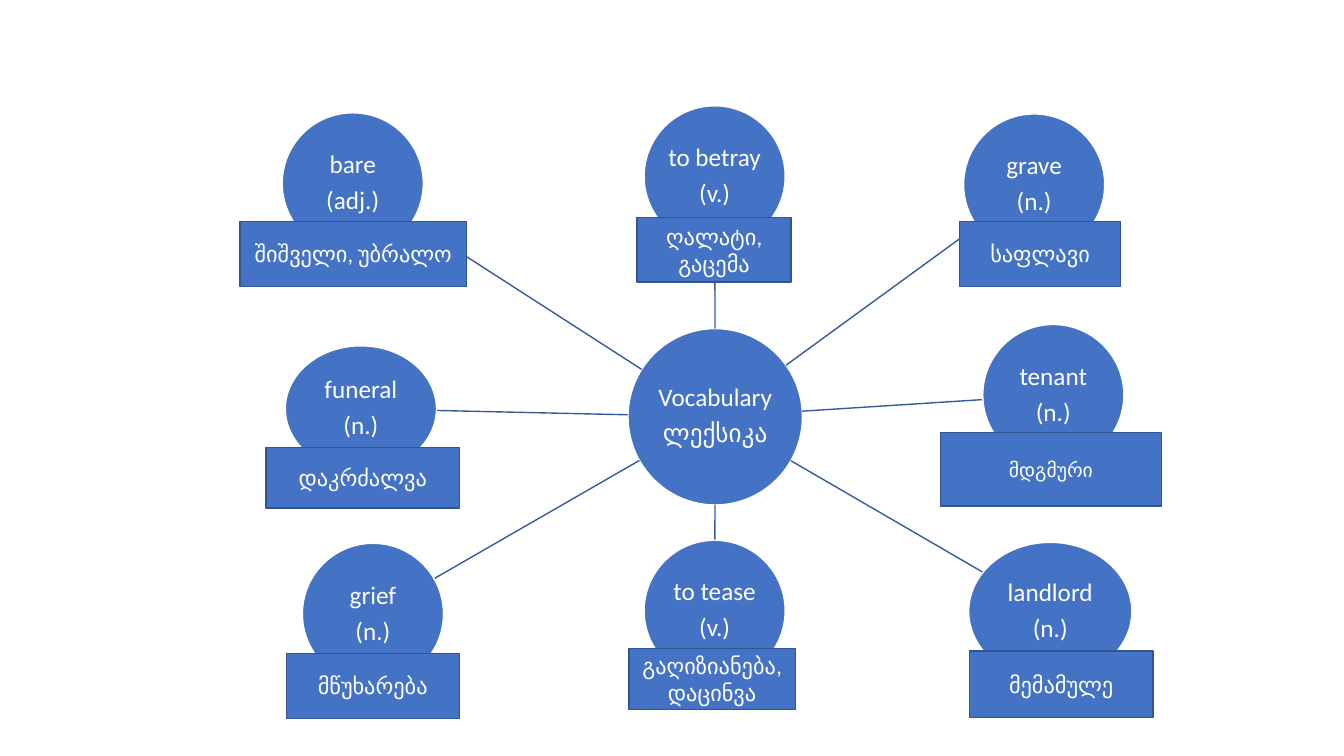
from dataclasses import dataclass
from math import hypot

from lxml import etree
from pptx import Presentation
from pptx.dml.color import RGBColor
from pptx.enum.shapes import MSO_CONNECTOR, MSO_SHAPE
from pptx.enum.text import MSO_ANCHOR, PP_ALIGN
from pptx.oxml.ns import qn
from pptx.util import Pt

OVAL, RECT = MSO_SHAPE.OVAL, MSO_SHAPE.RECTANGLE
STRAIGHT = MSO_CONNECTOR.STRAIGHT
MIDDLE, CENTER = MSO_ANCHOR.MIDDLE, PP_ALIGN.CENTER


@dataclass(frozen=True)
class Theme:
    fill: RGBColor = RGBColor(0x44, 0x72, 0xC4)
    white: RGBColor = RGBColor(0xFF, 0xFF, 0xFF)
    spoke: RGBColor = RGBColor(0x36, 0x5B, 0x9D)
    edge: RGBColor = RGBColor(0x32, 0x54, 0x91)
    font: str = "Calibri"
    word: int = 18
    gloss: int = 16
    small: int = 14


THEME = Theme()
SLIDE = (960, 540)
HUB = (448.6, 234.7, 124.6, 126)

# word, part of speech, circle box, Georgian meaning, label box, label size
WORDS = [
    ("to betray", "(v.)", (460.1, 75.6, 100.8, 100.8),
     "ღალატი, გაცემა", (455, 155.5, 110.2, 46.1), THEME.gloss),
    ("grave", "(n.)", (688.3, 81.4, 100.8, 100.8),
     "საფლავი", (685.4, 158.4, 115.2, 46.1), THEME.gloss),
    ("tenant", "(n.)", (702, 231.8, 100.8, 100.8),
     "მდგმური", (671.8, 308.9, 157.7, 52.6), THEME.small),
    ("landlord", "(n.)", (691.9, 387.4, 116.6, 98.6),
     "მემამულე", (692.6, 465.1, 131, 47.5), THEME.gloss),
    ("to tease", "(v.)", (460.1, 385.9, 100.8, 100.8),
     "გაღიზიანება, დაცინვა", (449.3, 463, 118.8, 43.9), THEME.gloss),
    ("grief", "(n.)", (216, 388.1, 100.8, 100.8),
     "მწუხარება", (204.5, 466.6, 123.8, 46.8), THEME.gloss),
    ("funeral", "(n.)", (203.8, 247, 108, 90),
     "დაკრძალვა", (190.1, 319.7, 138.2, 43.2), THEME.gloss),
    ("bare", "(adj.)", (201.6, 80.6, 100.8, 100.8),
     "შიშველი, უბრალო", (171.4, 158.4, 162, 46.1), THEME.gloss),
]


def put(item, **values):
    for name, value in values.items():
        setattr(item, name, value)


def add_block(slide, kind, box, edge, lines, size):
    """Draw a filled shape with centred lines of text and return it."""
    block = slide.shapes.add_shape(kind, *map(Pt, box))
    block.shadow.inherit = False
    block.fill.solid()
    block.fill.fore_color.rgb = THEME.fill
    block.line.color.rgb = edge
    block.line.width = Pt(1)
    frame = block.text_frame
    put(frame, word_wrap=True, vertical_anchor=MIDDLE)
    for i, text in enumerate(lines):
        para = frame.add_paragraph() if i else frame.paragraphs[0]
        para.text = text
        para.alignment = CENTER
        put(para.font, name=THEME.font, size=Pt(size))
        para.font.color.rgb = THEME.white
    return block


def add_circle(slide, box, lines):
    circle = add_block(slide, OVAL, box, THEME.white, lines, THEME.word)
    frame = circle.text_frame
    inset = Pt(0.9)
    put(frame, margin_left=inset, margin_right=inset,
        margin_top=inset, margin_bottom=inset)
    for para in frame.paragraphs:
        put(para, line_spacing=0.9, space_after=Pt(0.35 * THEME.word))


def center(box):
    left, top, width, height = box
    return left + width / 2, top + height / 2


def rim(box, goal):
    """Return the point where the ray to the goal leaves the ellipse."""
    x, y = center(box)
    dx, dy = goal[0] - x, goal[1] - y
    scale = 1 / hypot(dx / (box[2] / 2), dy / (box[3] / 2))
    return x + dx * scale, y + dy * scale


def add_spoke(slide, hub, box):
    ends = rim(hub, center(box)) + rim(box, center(hub))
    spoke = slide.shapes.add_connector(STRAIGHT, *map(Pt, ends))
    spoke.line.color.rgb = THEME.spoke
    spoke.line.width = Pt(1)
    etree.SubElement(spoke._element.spPr, qn("a:effectLst"))


def add_wheel(slide, hub, words):
    add_circle(slide, hub, ["Vocabulary", "ლექსიკა"])
    for word, part, box, *_ in words:
        add_spoke(slide, hub, box)
        add_circle(slide, box, [word, part])


def add_labels(slide, words):
    for *_, gloss, box, size in words:
        add_block(slide, RECT, box, THEME.edge, [gloss], size)


def main():
    deck = Presentation()
    deck.slide_width, deck.slide_height = map(Pt, SLIDE)
    slide = deck.slides.add_slide(deck.slide_layouts[6])
    add_wheel(slide, HUB, WORDS)
    add_labels(slide, WORDS)
    deck.save("out.pptx")


if __name__ == "__main__":
    main()
